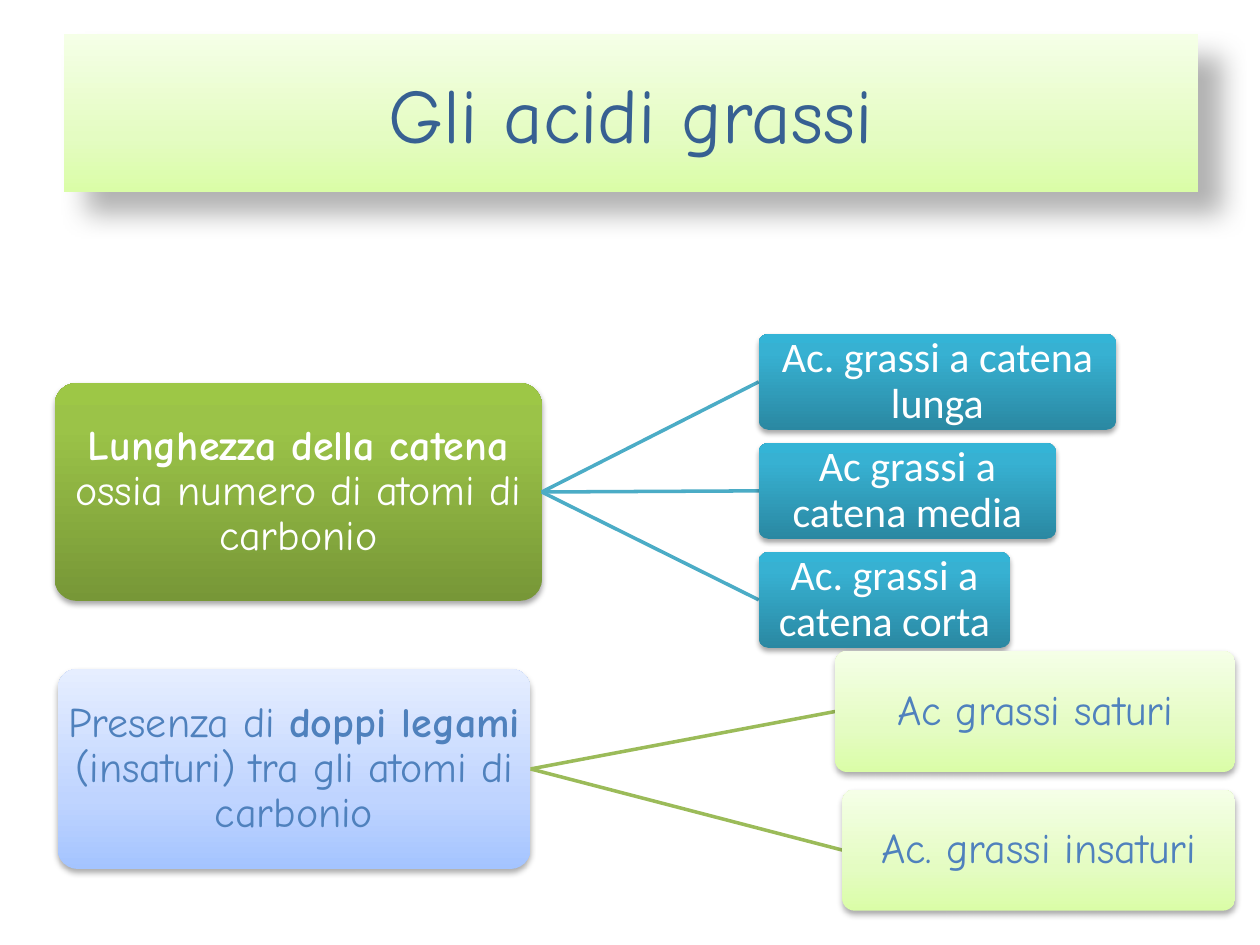
from copy import deepcopy
from dataclasses import dataclass

from lxml.etree import SubElement
from pptx import Presentation
from pptx.dml.color import RGBColor
from pptx.enum.shapes import MSO_CONNECTOR as Connector, MSO_SHAPE as Shape
from pptx.enum.text import MSO_ANCHOR as Anchor, PP_ALIGN as Align
from pptx.oxml.ns import qn
from pptx.util import Pt

WHITE = RGBColor(0xFF, 0xFF, 0xFF)
NAVY = RGBColor(0x37, 0x60, 0x92)
BLUE = RGBColor(0x4F, 0x81, 0xBD)
TEAL = RGBColor(0x4B, 0xAC, 0xC6)
GREEN = RGBColor(0x9B, 0xBB, 0x59)
HAND_FONT = "Comic Neue"
PLAIN_FONT = "Calibri"


@dataclass(frozen=True)
class Shadow:
    opacity: int
    blur: float
    distance: float
    angle: int


@dataclass(frozen=True)
class Style:
    stops: tuple[tuple[float, RGBColor], ...]
    shadow: Shadow
    color: RGBColor
    font: str = HAND_FONT


@dataclass(frozen=True)
class Node:
    left: float
    top: float
    width: float
    height: float
    spans: tuple[tuple[str, bool], ...]
    style: Style

    @property
    def middle(self) -> float:
        return self.top + self.height / 2


@dataclass(frozen=True)
class Branch:
    root: Node
    leaves: tuple[Node, ...]
    line_color: RGBColor


def gradient(*stops: tuple[float, str]) -> tuple[tuple[float, RGBColor], ...]:
    return tuple((place, RGBColor.from_string(color)) for place, color in stops)


# Styles, with gradients running from bottom to top
TITLE_SHADOW = Shadow(30, 15, 18, 45)
STRONG_SHADOW = Shadow(35, 3.1, 1.8, 90)
SOFT_SHADOW = Shadow(32, 3.5, 2.2, 90)
LIME = gradient((0, "DAFDA7"), (0.35, "E4FCC2"), (1, "F5FFE7"))
OLIVE = gradient((0, "779737"), (0.8, "9BC348"), (1, "9DC746"))
AQUA = gradient((0, "2A88A2"), (0.8, "37B1D2"), (1, "34B4D6"))
SKY = gradient((0, "A4C4FF"), (0.35, "BFD4FF"), (1, "E6EEFF"))

TITLE = Style(LIME, TITLE_SHADOW, NAVY)
LENGTH_ROOT = Style(OLIVE, STRONG_SHADOW, WHITE)
LENGTH_LEAF = Style(AQUA, STRONG_SHADOW, WHITE, PLAIN_FONT)
BOND_ROOT = Style(SKY, SOFT_SHADOW, BLUE)
BOND_LEAF = Style(LIME, SOFT_SHADOW, BLUE)

# Content
CHAINS = (
    ("Ac. grassi a catena lunga", 204.2),
    ("Ac grassi a catena media", 169.9),
    ("Ac. grassi a catena corta", 143.7),
)
BRANCHES = (
    Branch(
        Node(31.2, 218.9, 278.4, 124.5,
             (("Lunghezza della catena", True),
              (" ossia numero di atomi di carbonio", False)), LENGTH_ROOT),
        tuple(Node(433.6, 190.8 + 62.3 * row, width, 54.8,
                   ((text, False),), LENGTH_LEAF)
              for row, (text, width) in enumerate(CHAINS)),
        TEAL),
    Branch(
        Node(33, 382.2, 270.2, 114.4,
             (("Presenza di ", False), ("doppi legami", True),
              (" (insaturi) tra gli atomi di carbonio", False)), BOND_ROOT),
        (Node(477.2, 372, 228.6, 69.2, (("Ac grassi saturi", False),), BOND_LEAF),
         Node(481.4, 451.2, 224.4, 69.2, (("Ac. grassi insaturi", False),), BOND_LEAF)),
        GREEN),
)


def apply_style(shape, style: Style) -> None:
    """Give a shape its gradient, outline and shadow."""
    shape.fill.gradient()
    shape.fill.gradient_angle = 90
    properties = shape._element.spPr
    stop_list = properties.find(".//" + qn("a:gsLst"))
    stop_list.append(deepcopy(stop_list[-1]))
    for stop, (place, color) in zip(shape.fill.gradient_stops, style.stops):
        stop.position = place
        stop.color.rgb = color
    shape.line.fill.background()
    shape.shadow.inherit = False
    shadow = style.shadow
    outer = SubElement(properties.find(qn("a:effectLst")), qn("a:outerShdw"), {
        "blurRad": str(int(Pt(shadow.blur))), "dist": str(int(Pt(shadow.distance))),
        "dir": str(shadow.angle * 60000), "algn": "ctr", "rotWithShape": "0"})
    black = SubElement(outer, qn("a:srgbClr"), val="000000")
    SubElement(black, qn("a:alpha"), val=str(shadow.opacity * 1000))


def write_text(shape, spans: tuple[tuple[str, bool], ...], style: Style,
               size: float, spacing: float) -> None:
    frame = shape.text_frame
    frame.word_wrap = True
    frame.vertical_anchor = Anchor.MIDDLE
    para = frame.paragraphs[0]
    para.alignment = Align.CENTER
    para.line_spacing = spacing
    for text, bold in spans:
        span = para.add_run()
        span.text = text
        for name, value in {"name": style.font, "size": Pt(size), "bold": bold}.items():
            setattr(span.font, name, value)
        span.font.color.rgb = style.color


def draw_node(page, node: Node) -> None:
    box = page.shapes.add_shape(Shape.ROUNDED_RECTANGLE, Pt(node.left), Pt(node.top),
                                Pt(node.width), Pt(node.height))
    box.adjustments[0] = 0.1
    apply_style(box, node.style)
    for side in ("left", "top", "right", "bottom"):
        setattr(box.text_frame, f"margin_{side}", 0)
    write_text(box, node.spans, node.style, 24, 0.9)


def draw_link(page, root: Node, leaf: Node, color: RGBColor) -> None:
    link = page.shapes.add_connector(
        Connector.STRAIGHT, Pt(root.left + root.width), Pt(root.middle),
        Pt(leaf.left), Pt(leaf.middle))
    link.line.color.rgb = color
    link.line.width = Pt(2)
    SubElement(link._element.spPr, qn("a:effectLst"))


def draw_branch(page, branch: Branch) -> None:
    draw_node(page, branch.root)
    for leaf in branch.leaves:
        draw_link(page, branch.root, leaf, branch.line_color)
        draw_node(page, leaf)


def main() -> None:
    deck = Presentation()
    deck.slide_width, deck.slide_height = Pt(720), Pt(540)
    page = deck.slides.add_slide(deck.slide_layouts[5])

    # Title banner
    title = page.shapes.title
    frame = {"left": 36.6, "top": 19.5, "width": 648, "height": 90}
    for name, value in frame.items():
        setattr(title, name, Pt(value))
    apply_style(title, TITLE)
    write_text(title, (("Gli acidi grassi", False),), TITLE, 44, 1)

    # Classification trees
    for branch in BRANCHES:
        draw_branch(page, branch)

    deck.save("out.pptx")


if __name__ == "__main__":
    main()
